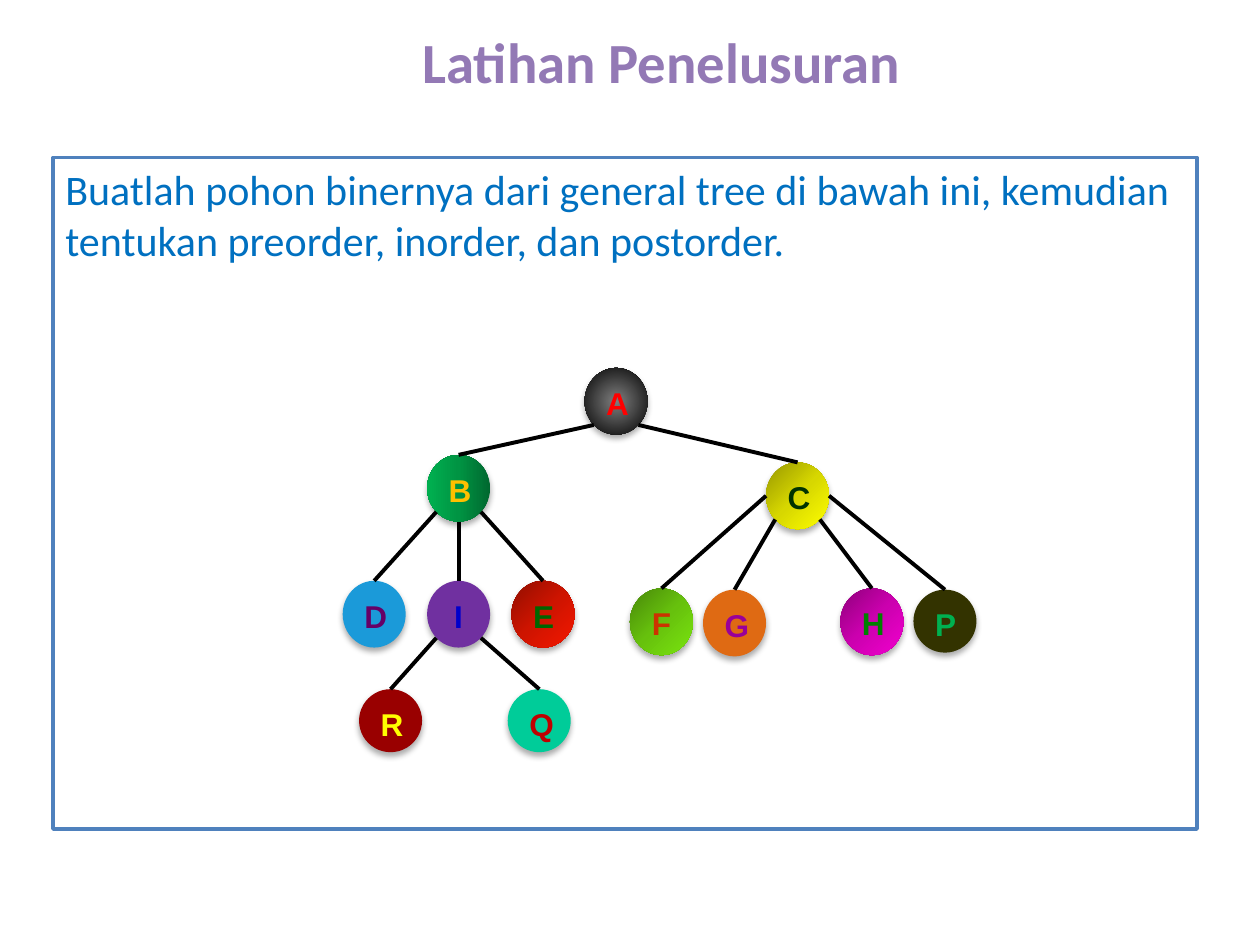
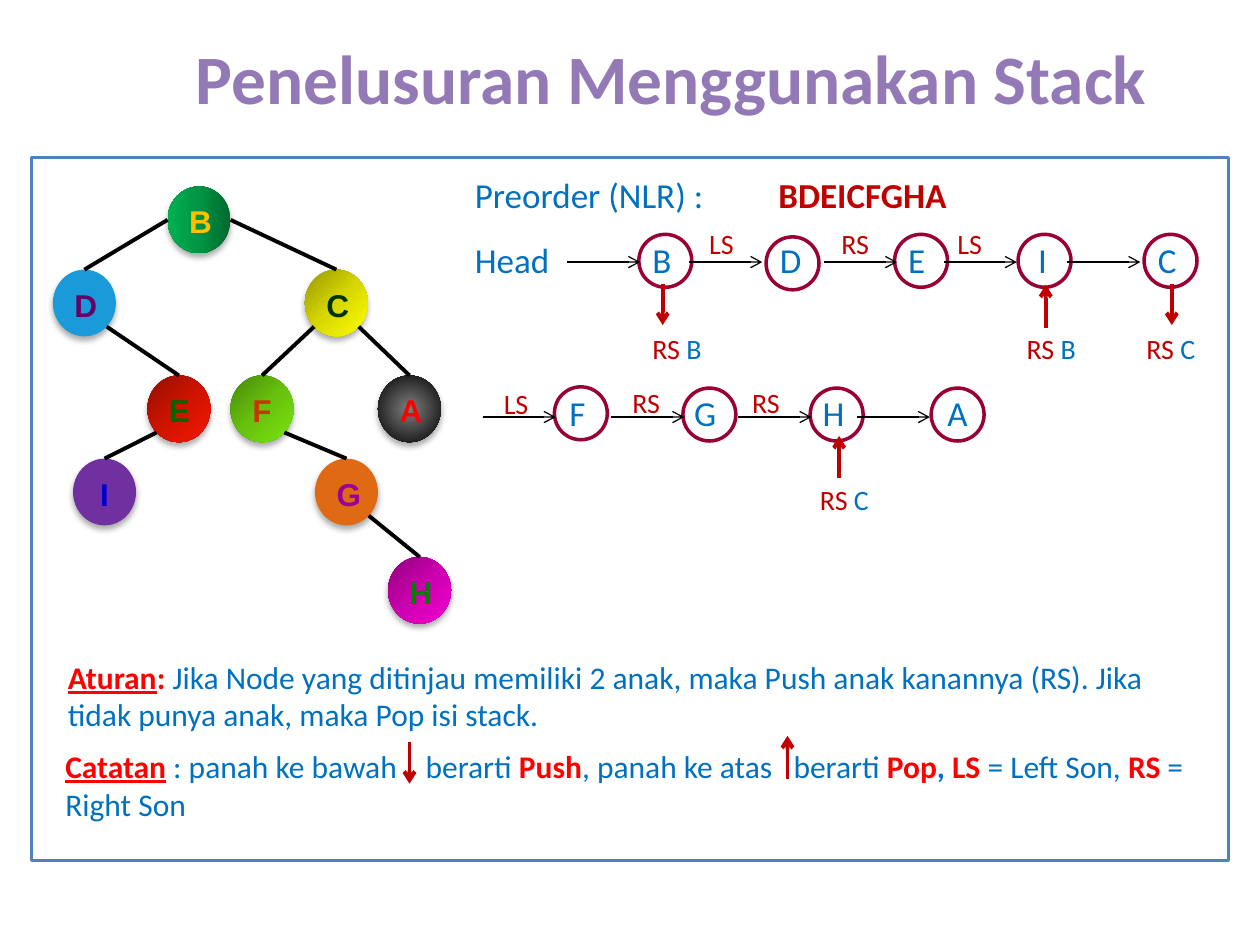
"""Build two slides on tree traversal: an exercise and a stack walkthrough."""
import pptx
import pptx.dml.color
import pptx.enum.shapes
import pptx.enum.text
import pptx.oxml
import pptx.oxml.ns
import pptx.util

PX = 9144
SHAPES = pptx.enum.shapes.MSO_SHAPE
ANCHOR = pptx.enum.text.MSO_ANCHOR
ALIGN = pptx.enum.text.PP_ALIGN


class Theme:
    face, bold_face = "Calibri", "Arial"
    title, blue, red, dark, black = "9379B5", "0070C0", "FF0000", "C00000", "000000"
    white, frame, ring = "FFFFFF", "4F81BD", "990033"
    body, node, word, tag, note = 24, 18, 20, 16, 18
    thin, edge, rim = 0.75, 2.25, 2
    nodes = {
        "A": ("FF0000", ["7F7F7F", "000000"], None),
        "B": ("FFC000", ["00682F", "009443", "00B050"], 180),
        "C": ("003300", ["979700", "D7D700", "FFFF00"], 45),
        "D": ("660066", ["1B9AD9"], None),
        "E": ("006600", ["910E00", "CE1400", "F41700"], 45),
        "F": ("CC3300", ["488809", "67C10D", "7AE50F"], 45),
        "G": ("990099", ["DF6A13"], None),
        "H": ("008000", ["8F007B", "CC00AF", "F200CF"], 45),
        "I": ("0000CC", ["7030A0"], None),
        "P": ("00B050", ["333300"], None),
        "Q": ("C00000", ["00CC99"], None),
        "R": ("FFFF00", ["990000"], None),
    }


SITES = {"w": (0, 0.5), "sw": (0.146, 0.854), "s": (0.5, 1),
         "se": (0.854, 0.854), "e": (1, 0.5)}


def px(*nums):
    return [round(num * PX) for num in nums]


def rgb(code):
    return pptx.dml.color.RGBColor.from_string(code)


def xml(text):
    head, rest = text.split(" ", 1)
    return pptx.oxml.parse_xml(f"{head} {pptx.oxml.ns.nsdecls('a')} {rest}")


def find(shape, tag):
    return shape.element.spPr.find(pptx.oxml.ns.qn(tag))


def write(frame, parts, size, face=Theme.face, align=ALIGN.LEFT):
    """Fill a frame with one paragraph of (text, colour, marks) parts."""
    frame.word_wrap = True
    frame.text = parts[0][0]
    para = frame.paragraphs[0]
    para.alignment = align
    for text, *_ in parts[1:]:
        para.add_run().text = text
    for run, (_, color, marks) in zip(para.runs, parts):
        run.font.name = face
        run.font.size = pptx.util.Pt(size)
        run.font.color.rgb = rgb(color)
        run.font.bold = "b" in marks
        run.font.underline = "u" in marks


def label(slide, box, parts, size, **style):
    frame = slide.shapes.add_textbox(*px(*box)).text_frame
    write(frame, parts, size, **style)
    return frame


def heading(slide, box, text, size):
    frame = label(slide, box, [(text, Theme.title, "b")], size, align=ALIGN.CENTER)
    frame.vertical_anchor = ANCHOR.MIDDLE


def outline(slide, kind, box, color, fill=None):
    """Draw a shape with a coloured rim and an optional fill."""
    shape = slide.shapes.add_shape(kind, *px(*box))
    shape.shadow.inherit = False
    if fill:
        shape.fill.solid()
        shape.fill.fore_color.rgb = rgb(fill)
    else:
        shape.fill.background()
    shape.line.color.rgb = rgb(color)
    shape.line.width = pptx.util.Pt(Theme.rim)
    return shape


def panel(slide, box):
    shape = outline(slide, SHAPES.RECTANGLE, box, Theme.frame, Theme.white)
    shape.text_frame.vertical_anchor = ANCHOR.TOP
    return shape


def blend(shape, stops, angle):
    """Give a shape a linear gradient, or a round one without an angle."""
    last = len(stops) - 1
    marks = "".join(f'<a:gs pos="{100000 * i // last}"><a:srgbClr val="{code}"/></a:gs>'
                    for i, code in enumerate(stops))
    if angle is None:
        way = ('<a:path path="circle"><a:fillToRect l="50000" t="50000" '
               'r="50000" b="50000"/></a:path>')
    else:
        way = f'<a:lin ang="{angle * 60000}" scaled="0"/>'
    shape.fill.gradient()
    shape.element.spPr.replace(find(shape, "a:gradFill"), xml(
        f'<a:gradFill rotWithShape="1"><a:gsLst>{marks}</a:gsLst>{way}</a:gradFill>'))


def node(slide, name, left, top, high=53):
    """Draw a shaded tree node with its letter."""
    ink, stops, angle = Theme.nodes[name]
    shape = slide.shapes.add_shape(SHAPES.OVAL, *px(left, top, 50, high))
    shape.line.fill.background()
    if len(stops) > 1:
        blend(shape, stops, angle)
    else:
        shape.fill.solid()
        shape.fill.fore_color.rgb = rgb(stops[0])
    shape.shadow.inherit = False
    find(shape, "a:effectLst").append(xml(
        '<a:outerShdw blurRad="44450" dist="27940" dir="5400000" algn="ctr">'
        '<a:srgbClr val="000000"><a:alpha val="32000"/></a:srgbClr></a:outerShdw>'))
    write(shape.text_frame, [(name, ink, "b")], Theme.node, Theme.bold_face, ALIGN.CENTER)
    shape.text_frame.vertical_anchor = ANCHOR.TOP
    return shape


def line(slide, ends, color, width):
    link = slide.shapes.add_connector(pptx.enum.shapes.MSO_CONNECTOR.STRAIGHT, *ends)
    link.line.color.rgb = rgb(color)
    link.line.width = pptx.util.Pt(width)
    link.element.spPr.append(xml("<a:effectLst />"))
    return link


def arrow(slide, ends, color, width):
    link = line(slide, px(*ends), color, width)
    find(link, "a:ln").append(xml('<a:tailEnd type="arrow"/>'))


def tree(slide, spots, edges):
    """Place nodes and join each parent's side to the top of its child."""
    balls = {name: node(slide, name, *spot) for name, spot in spots.items()}
    for mum, side, kid in edges:
        ball, (across, down) = balls[mum], SITES[side]
        start = [round(ball.left + across * ball.width),
                 round(ball.top + down * ball.height)]
        link = line(slide, start + start, Theme.black, Theme.edge)
        link.end_connect(balls[kid], 0)


def chain(slide, top, steps, starts):
    """Draw a row of ringed letters and the arrows leading to them."""
    for name, left, ring, drop in steps:
        label(slide, (left, top, 42, 44), [(name, Theme.blue, "")], Theme.word)
        outline(slide, SHAPES.OVAL, (ring, top + drop, 42, 42), Theme.ring)
    mid = top + (24 if top < 300 else 25)
    for left in starts:
        arrow(slide, (left, mid, left + 58, mid), Theme.black, Theme.thin)


def upright(slide, left, start, end):
    arrow(slide, (left, start, left, end), Theme.dark, Theme.edge)


def task(slide):
    """Build the exercise slide."""
    heading(slide, (75, 17, 900, 62), "Latihan Penelusuran", 32.4)
    shape = panel(slide, (42, 125, 908, 533))
    write(shape.text_frame, [(
        "Buatlah pohon binernya dari general tree di bawah ini, kemudian "
        "tentukan preorder, inorder, dan postorder.", Theme.blue, "")], Theme.body)
    spots = {"A": (464, 292), "B": (339, 361), "C": (608, 367), "D": (272, 461),
             "I": (339, 461), "E": (406, 461), "F": (500, 467), "G": (558, 468),
             "H": (667, 467), "P": (725, 468, 50), "R": (285, 547, 50),
             "Q": (403, 547, 50)}
    edges = [("A", "sw", "B"), ("A", "se", "C"), ("B", "sw", "D"), ("B", "s", "I"),
             ("B", "se", "E"), ("C", "w", "F"), ("C", "sw", "G"), ("C", "se", "H"),
             ("C", "e", "P"), ("I", "sw", "R"), ("I", "se", "Q")]
    tree(slide, spots, edges)


def rules(slide):
    """Write the rule and the legend with its two arrows."""
    blue, red = Theme.blue, Theme.red
    label(slide, (44, 517, 928, 71), [
        ("Aturan", red, "bu"), (": ", red, "b"),
        ("Jika Node yang ditinjau memiliki 2 anak, maka Push anak kanannya (RS). "
         "Jika tidak punya anak, maka Pop isi stack.", blue, "")], Theme.note)
    frame = label(slide, (42, 588, 917, 71), [
        ("Catatan", red, "bu"), (" : panah ke bawah\tberarti ", blue, ""),
        ("Push", red, "b"), (", panah ke atas\tberarti ", blue, ""),
        ("Pop", red, "b"), (", ", blue, "b"), ("LS", red, "b"),
        (" = Left Son, ", blue, ""), ("RS", red, "b"),
        (" = Right Son", blue, "")], Theme.note)
    stops = "".join(f'<a:tab pos="{stop * PX}" algn="l"/>' for stop in (286, 578))
    props = frame.paragraphs[0]._p.get_or_add_pPr()
    props.append(xml(f"<a:tabLst >{stops}</a:tabLst>"))
    upright(slide, 325, 589, 622)
    upright(slide, 625, 618, 584)


def stack(slide):
    """Build the stack traversal slide."""
    panel(slide, (25, 125, 950, 558))
    heading(slide, (83, 30, 900, 62), "Penelusuran Menggunakan Stack", 39.6)
    spots = {"B": (133, 148), "D": (42, 214), "C": (242, 214), "E": (117, 298),
             "F": (183, 298), "A": (300, 298), "I": (58, 364), "G": (250, 364),
             "H": (308, 442)}
    edges = [("B", "w", "D"), ("B", "e", "C"), ("D", "se", "E"), ("E", "sw", "I"),
             ("C", "sw", "F"), ("C", "se", "A"), ("F", "se", "G"), ("G", "se", "H")]
    tree(slide, spots, edges)
    for left, top, wide, text, color, marks in [
            (367, 133, 258, "Preorder (NLR) :", Theme.blue, ""),
            (608, 133, 283, "BDEICFGHA", Theme.dark, "b"),
            (367, 184, 100, "Head", Theme.blue, "")]:
        label(slide, (left, top, wide, 44), [(text, color, marks)], Theme.word)
    chain(slide, 184, [("B", 508, 507, 2), ("D", 609, 608, 4), ("E", 711, 710, 2),
                       ("I", 814, 808, 2), ("C", 909, 908, 2)],
          (450, 547, 654, 749, 847))
    chain(slide, 306, [("F", 442, 440, 1), ("G", 541, 542, 2), ("H", 643, 643, 2),
                       ("A", 742, 739, 2)], (383, 485, 586, 680))
    for text, left, top in [("LS", 553, 175), ("RS", 658, 175), ("LS", 750, 175),
                            ("LS", 390, 302), ("RS", 492, 301), ("RS", 587, 301)]:
        label(slide, (left, top, 58, 37), [(text, Theme.dark, "")], Theme.tag)
    for name, left, top in [("B", 508, 258), ("B", 805, 258), ("C", 900, 258),
                            ("C", 641, 378)]:
        label(slide, (left, top, 100, 37),
              [("RS ", Theme.dark, ""), (name, Theme.blue, "")], Theme.tag)
    for left, start, end in [(526, 225, 258), (830, 260, 226), (930, 225, 258),
                             (666, 379, 346)]:
        upright(slide, left, start, end)
    rules(slide)


def main():
    deck = pptx.Presentation()
    deck.slide_width, deck.slide_height = px(1000, 750)
    for build in (task, stack):
        build(deck.slides.add_slide(deck.slide_layouts[6]))
    deck.save("out.pptx")


if __name__ == "__main__":
    main()
